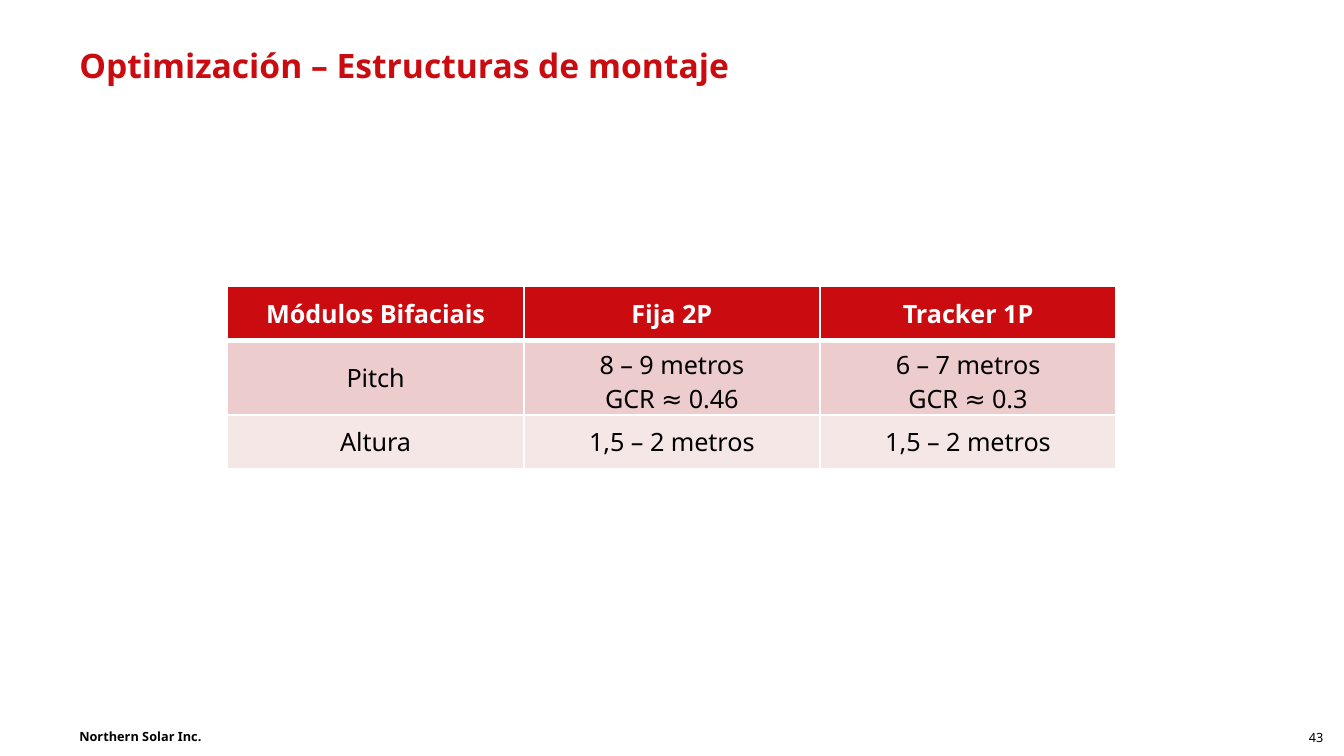
from dataclasses import dataclass

from lxml.etree import SubElement
from pptx import Presentation
from pptx.dml.color import RGBColor
from pptx.enum.text import MSO_ANCHOR, PP_ALIGN
from pptx.oxml import parse_xml
from pptx.oxml.ns import nsdecls, qn
from pptx.util import Pt

TITLE = "Optimización – Estructuras de montaje"
FOOTER = "Northern Solar Inc."
PAGE_NUMBER = "43"
ROWS = [
    ["Módulos Bifaciais", "Fija 2P", "Tracker 1P"],
    ["Pitch", "8 – 9 metros\nGCR ≈ 0.46", "6 – 7 metros\nGCR ≈ 0.3"],
    ["Altura", "1,5 – 2 metros", "1,5 – 2 metros"],
]


@dataclass(frozen=True)
class Theme:
    font: str = "Noto Sans"
    red: str = "CA0B0F"
    black: str = "000000"
    white: str = "FFFFFF"
    bands: tuple = ("ECCCCC", "F6E7E7")
    title_size: float = 18
    table_size: float = 13.5
    footer_size: float = 6.8
    line: float = 1
    header_line: float = 3


THEME = Theme()
MARGIN_LEFT = 42.5
TABLE_LEFT, TABLE_TOP = 121.9, 153.4
COLUMN_WIDTH, ROW_HEIGHT = 158.7, 29.2


def style_text(frame, size, color, bold=False, align=PP_ALIGN.LEFT):
    for paragraph in frame.paragraphs:
        paragraph.alignment = align
        font = paragraph.font
        font.name, font.size, font.bold = THEME.font, Pt(size), bold
        font.color.rgb = RGBColor.from_string(color)


def add_text(page, text, place, anchor, wrap, **style):
    box = page.shapes.add_textbox(*map(Pt, place))
    frame = box.text_frame
    frame.margin_left = frame.margin_top = frame.margin_right = frame.margin_bottom = 0
    frame.word_wrap, frame.vertical_anchor = wrap, anchor
    frame.text = text
    style_text(frame, **style)


def set_borders(cell, widths):
    """Draw white borders; widths maps the sides L, R, T, B, in that order."""
    properties = cell._tc.get_or_add_tcPr()
    for index, (side, width) in enumerate(widths.items()):
        line = parse_xml(f'<a:ln{side} {nsdecls("a")} w="{Pt(width)}"/>')
        fill = SubElement(line, qn("a:solidFill"))
        SubElement(fill, qn("a:srgbClr"), val=THEME.white)
        properties.insert(index, line)


def add_table(page):
    columns = len(ROWS[0])
    table = page.shapes.add_table(
        len(ROWS), columns, Pt(TABLE_LEFT), Pt(TABLE_TOP),
        Pt(columns * COLUMN_WIDTH), Pt(len(ROWS) * ROW_HEIGHT),
    ).table
    for column in table.columns:
        column.width = Pt(COLUMN_WIDTH)
    for row_index, texts in enumerate(ROWS):
        table.rows[row_index].height = Pt(ROW_HEIGHT)
        header = row_index == 0
        color = THEME.red if header else THEME.bands[(row_index - 1) % 2]
        for column_index, text in enumerate(texts):
            cell = table.cell(row_index, column_index)
            cell.text = text
            cell.vertical_anchor = MSO_ANCHOR.MIDDLE
            cell.fill.solid()
            cell.fill.fore_color.rgb = RGBColor.from_string(color)
            style_text(cell.text_frame, THEME.table_size,
                       THEME.white if header else THEME.black, header, PP_ALIGN.CENTER)
            widths = dict.fromkeys("LRTB", THEME.line)
            if header:
                widths["B"] = THEME.header_line
            elif row_index == 1:
                widths["T"] = THEME.header_line
            set_borders(cell, widths)


def main():
    deck = Presentation()
    deck.slide_width, deck.slide_height = Pt(720), Pt(405)
    page = deck.slides.add_slide(deck.slide_layouts[6])
    add_text(page, PAGE_NUMBER, (689, 387.5, 20, 15), MSO_ANCHOR.MIDDLE, False,
             size=THEME.footer_size, color=THEME.black, align=PP_ALIGN.RIGHT)
    add_text(page, FOOTER, (MARGIN_LEFT, 387.5, 96.5, 14), MSO_ANCHOR.MIDDLE, False,
             size=THEME.footer_size, color=THEME.black, bold=True)
    add_table(page)
    add_text(page, TITLE, (MARGIN_LEFT, 23.8, 461.5, 51), MSO_ANCHOR.TOP, True,
             size=THEME.title_size, color=THEME.red, bold=True)
    deck.save("out.pptx")


if __name__ == "__main__":
    main()
